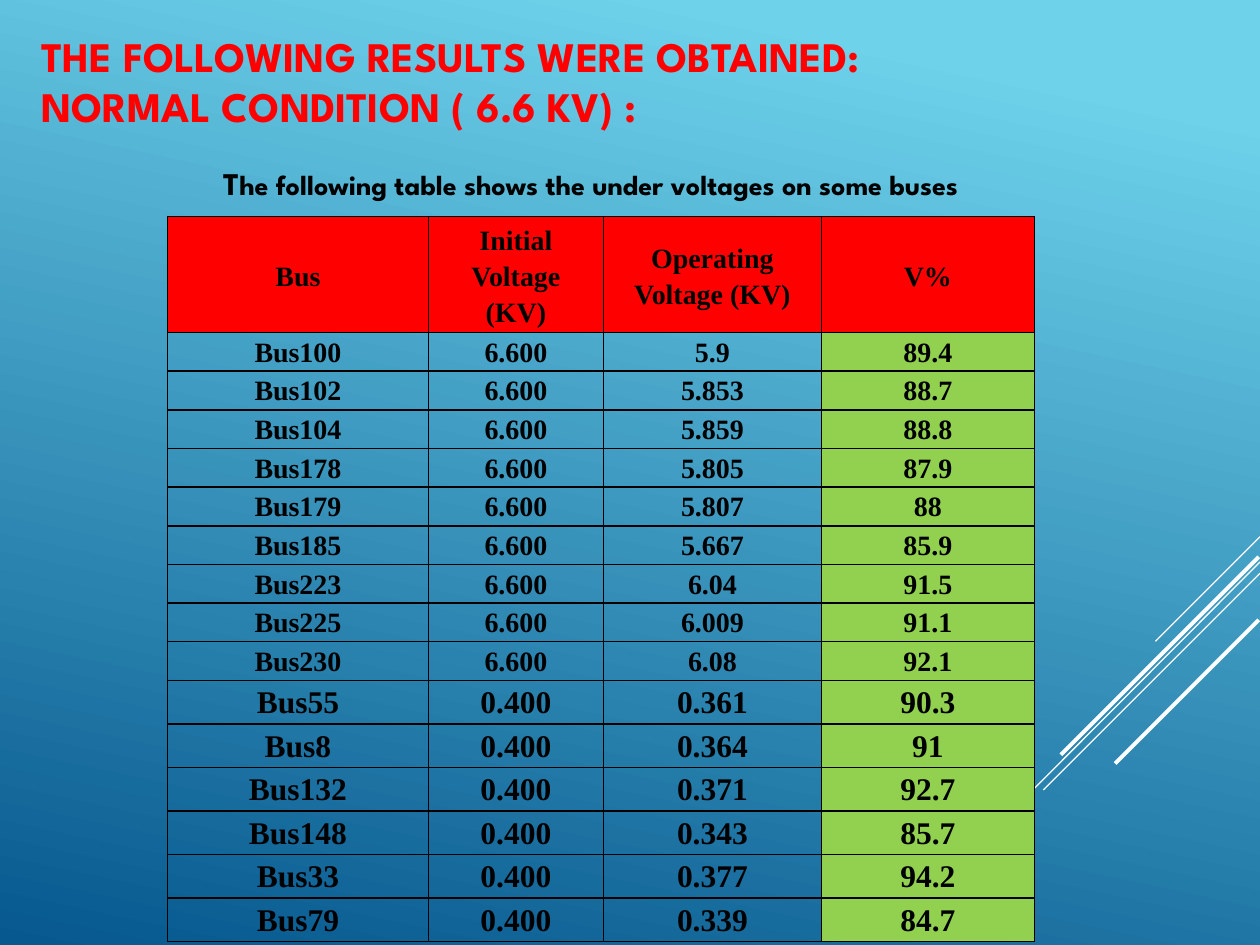
from lxml.etree import SubElement
from pptx import Presentation
from pptx.dml.color import RGBColor
from pptx.enum.shapes import MSO_CONNECTOR
from pptx.enum.text import MSO_ANCHOR as ANCHOR, PP_ALIGN as ALIGN
from pptx.oxml.ns import qn
from pptx.util import Inches, Pt

SKY = RGBColor(0x6E, 0xD2, 0xEB)
NAVY = RGBColor(0x06, 0x58, 0x8E)
WHITE = RGBColor(0xFF, 0xFF, 0xFF)
BLACK = RGBColor(0, 0, 0)
RED = RGBColor(0xFF, 0, 0)
GREEN = RGBColor(0x92, 0xD0, 0x50)

HEAD_FONT = "League Spartan"
TABLE_FONT = "Times New Roman"

STRIPES = [
    (10, 4.26, 9.17, 5.09, 0.75),
    (10, 4.46, 7.3, 7.17, 0.75),
    (10, 4.55, 8.28, 6.27, 0.75),
    (9.99, 4.42, 8.42, 5.99, 2.25),
    (9.99, 4.92, 8.85, 6.06, 2.25),
]
HEADERS = ["Bus", "Initial Voltage (KV)", "Operating Voltage (KV)", "V%"]
MEDIUM_BUSES = [
    ("Bus100", "5.9", "89.4"),
    ("Bus102", "5.853", "88.7"),
    ("Bus104", "5.859", "88.8"),
    ("Bus178", "5.805", "87.9"),
    ("Bus179", "5.807", "88"),
    ("Bus185", "5.667", "85.9"),
    ("Bus223", "6.04", "91.5"),
    ("Bus225", "6.009", "91.1"),
    ("Bus230", "6.08", "92.1"),
]
LOW_BUSES = [
    ("Bus55", "0.361", "90.3"),
    ("Bus8", "0.364", "91"),
    ("Bus132", "0.371", "92.7"),
    ("Bus148", "0.343", "85.7"),
    ("Bus33", "0.377", "94.2"),
    ("Bus79", "0.339", "84.7"),
]
COL_WIDTHS = [2.07, 1.39, 1.73, 1.69]


def add_text(p, text, *, size, font, color=BLACK, align=None, spacing=None):
    """Append bold text to a paragraph, with a line break at each newline."""
    for i, line in enumerate(text.split("\n")):
        if i:
            p.add_line_break()
        r = p.add_run()
        r.text = line
        r.font.size, r.font.name, r.font.bold = Pt(size), font, True
        r.font.color.rgb = color
    if align is not None:
        p.alignment = align
    if spacing:
        p.line_spacing = spacing


def add_box(s, x, y, w, h):
    """Add a wrapping text box and return its text frame."""
    tf = s.shapes.add_textbox(Inches(x), Inches(y), Inches(w), Inches(h)).text_frame
    tf.word_wrap = True
    return tf


def add_background(s):
    """Fill the slide with the slanted blue gradient."""
    fill = s.background.fill
    fill.gradient()
    fill.gradient_angle = 360 - 102
    for stop, color, position in zip(fill.gradient_stops, (SKY, NAVY), (0.1, 1)):
        stop.color.rgb, stop.position = color, position


def add_stripes(s):
    """Draw the white diagonal lines at the right edge."""
    for x1, y1, x2, y2, width in STRIPES:
        line = s.shapes.add_connector(
            MSO_CONNECTOR.STRAIGHT, Inches(x1), Inches(y1), Inches(x2), Inches(y2))
        line.line.color.rgb, line.line.width = WHITE, Pt(width)
        SubElement(line._element.spPr, qn("a:effectLst"))


def add_title(s, x, y, w, h):
    """Place the two-line title at the foot of its box."""
    tf = add_box(s, x, y, w, h)
    tf.vertical_anchor = ANCHOR.BOTTOM
    tf.margin_bottom = Inches(0.16)
    add_text(tf.paragraphs[0],
             "THE FOLLOWING RESULTS WERE OBTAINED:\nNORMAL CONDITION ( 6.6 KV) :",
             size=24, font=HEAD_FONT, color=RED)


def add_caption(s, x, y, w, h):
    """Place the caption with its larger first letter."""
    p = add_box(s, x, y, w, h).paragraphs[0]
    for text, size in (("T", 18), ("he following table shows the under voltages on some buses", 16)):
        add_text(p, text, size=size, font=HEAD_FONT, align=ALIGN.CENTER)


def set_borders(cell):
    """Give a cell thin black borders on all sides."""
    tcPr = cell._tc.get_or_add_tcPr()
    for i, side in enumerate(("lnL", "lnR", "lnT", "lnB")):
        ln = SubElement(tcPr, qn(f"a:{side}"), w=str(Pt(1)))
        SubElement(SubElement(ln, qn("a:solidFill")), qn("a:srgbClr"), val=str(BLACK))
        tcPr.insert(i, ln)


def fill_cell(cell, text, size, color, anchor):
    """Write one table cell with its fill and borders."""
    cell.margin_left = cell.margin_right = Inches(0.08)
    cell.margin_top = cell.margin_bottom = 0
    cell.vertical_anchor = anchor
    if color is None:
        cell.fill.background()
    else:
        cell.fill.solid()
        cell.fill.fore_color.rgb = color
    set_borders(cell)
    add_text(cell.text_frame.paragraphs[0], text, size=size, font=TABLE_FONT,
             align=ALIGN.CENTER, spacing=1.15)


def add_voltage_table(s, x, y, w, h):
    """Build the table of bus voltages."""
    rows = [(HEADERS, 0.89, 16, [RED] * 4, ANCHOR.MIDDLE)]
    for buses, initial, height, size in ((MEDIUM_BUSES, "6.600", 0.29, 16),
                                         (LOW_BUSES, "0.400", 0.33, 18)):
        rows += [((bus, initial, operating, percent), height, size,
                  [None] * 3 + [GREEN], ANCHOR.TOP)
                 for bus, operating, percent in buses]
    table = s.shapes.add_table(len(rows), len(HEADERS), Inches(x), Inches(y),
                               Inches(w), Inches(h)).table
    table.first_row = table.horz_banding = False
    for col, width in zip(table.columns, COL_WIDTHS):
        col.width = Inches(width)
    for row, (texts, height, size, colors, anchor) in zip(table.rows, rows):
        row.height = Inches(height)
        for cell, text, color in zip(row.cells, texts, colors):
            fill_cell(cell, text, size, color, anchor)


def main():
    """Build and save the slide."""
    prs = Presentation()
    prs.slide_width, prs.slide_height = Inches(10), Inches(7.5)
    s = prs.slides.add_slide(prs.slide_layouts[6])
    add_background(s)
    add_stripes(s)
    add_title(s, 0.23, -0.47, 9.77, 1.67)
    add_voltage_table(s, 1.33, 1.72, 6.88, 5.56)
    add_caption(s, 0.86, 1.25, 7.66, 0.4)
    prs.save("out.pptx")


if __name__ == "__main__":
    main()
